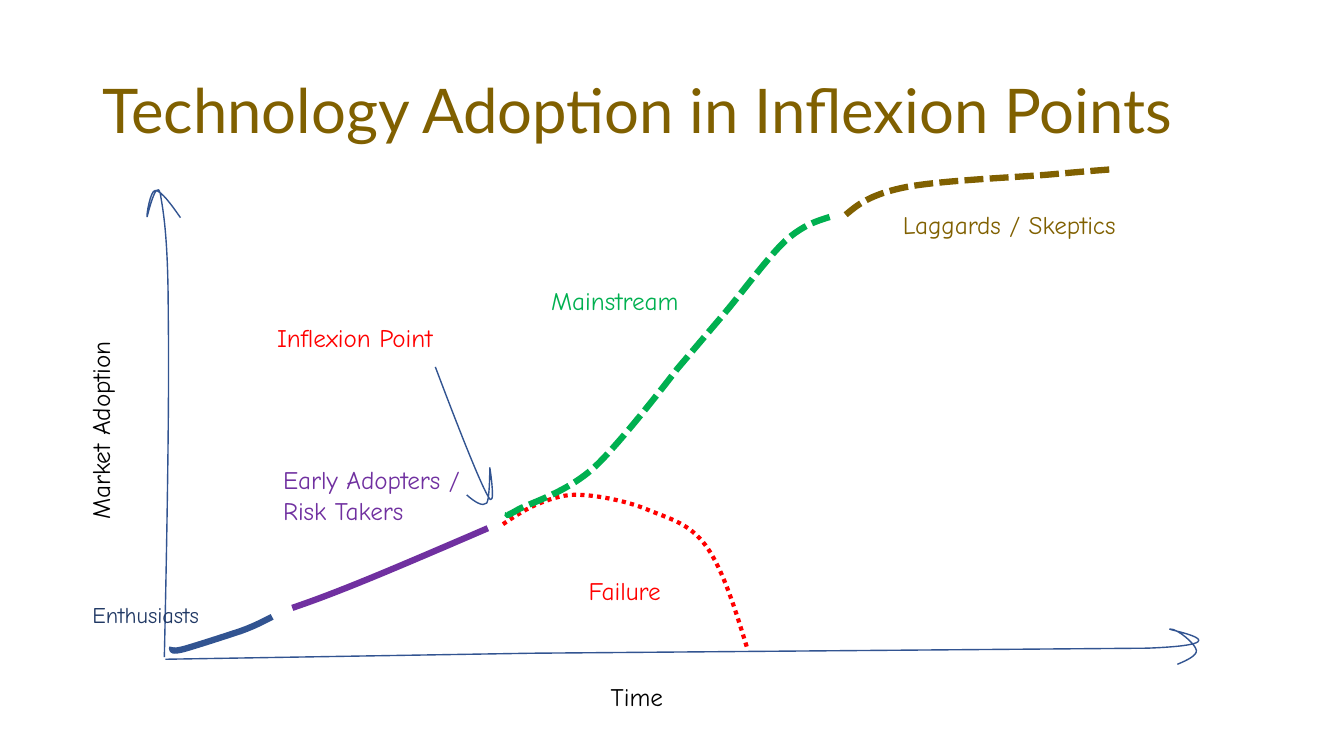
from lxml import etree
from pptx import Presentation
from pptx import util as u
from pptx.dml.color import RGBColor
from pptx.enum import dml, text
from pptx.oxml import ns

NAVY, PURPLE, RED = "325491", "7030A0", "FF0000"
GREEN, GOLD, BLACK = "00B050", "806000", "000000"
DOTS, DASHES = dml.MSO_LINE.ROUND_DOT, dml.MSO_LINE.SQUARE_DOT


def rgb(color):
    return RGBColor.from_string(color)


def add_run(p, words, font, size, color):
    r = p.add_run()
    r.text = words
    r.font.name = font
    r.font.size = u.Pt(size)
    r.font.color.rgb = rgb(color)


def add_title(s, words):
    sp = s.shapes.title
    sp.left, sp.top, sp.width, sp.height = map(u.Pt, (66, 28.8, 828, 104.4))
    tf = sp.text_frame
    tf.vertical_anchor = text.MSO_ANCHOR.MIDDLE
    tf.auto_size = text.MSO_AUTO_SIZE.NONE
    p = tf.paragraphs[0]
    p.alignment = text.PP_ALIGN.LEFT
    p.line_spacing = 0.9
    add_run(p, words, "Lato", 44, GOLD)


def add_label(s, lines, box, color, size=18, rotation=0, wrap=False):
    sp = s.shapes.add_textbox(*map(u.Pt, box))
    sp.rotation = rotation
    tf = sp.text_frame
    tf.word_wrap = wrap
    tf.auto_size = text.MSO_AUTO_SIZE.SHAPE_TO_FIT_TEXT
    for i, words in enumerate(lines):
        p = tf.add_paragraph() if i else tf.paragraphs[0]
        add_run(p, words, "Comic Neue", size, color)


def bend(sp, segments):
    lines = list(sp._element.iter(ns.qn("a:lnTo")))
    for line, (*controls, end) in zip(lines, segments):
        if controls:
            line.tag = ns.qn("a:cubicBezTo")
        for i, (x, y) in enumerate(controls):
            pt = etree.Element(ns.qn("a:pt"))
            pt.set("x", str(u.Pt(x) - sp.left))
            pt.set("y", str(u.Pt(y) - sp.top))
            line.insert(i, pt)


def add_curve(s, color, width, start, segments, dash=None):
    fb = s.shapes.build_freeform(*map(u.Pt, start))
    ends = [tuple(map(u.Pt, segment[-1])) for segment in segments]
    fb.add_line_segments(ends, close=False)
    sp = fb.convert_to_shape()
    bend(sp, segments)
    sp.shadow.inherit = False
    sp.fill.background()
    sp.line.color.rgb = rgb(color)
    sp.line.width = u.Pt(width)
    if dash:
        sp.line.dash_style = dash


def add_axes(s):
    add_curve(s, NAVY, 1, (117.4, 469.4), [
        [(119.5, 374.4), (121, 280), (120.2, 224.6)],
        [(120.2, 169.2), (116.6, 150.5), (114.5, 138.2)],
        [(111.6, 126.7), (105.1, 155.5), (105.1, 154.8)],
        [(104.4, 154.8), (107.3, 136.1), (110.9, 136.1)],
        [(115.2, 136.1), (122.4, 146.2), (128.9, 155.5)]])
    add_label(s, ["Market Adoption"], (-10.1, 282.2, 163.4, 29), BLACK, rotation=270)
    add_curve(s, NAVY, 1, (118.1, 470.9), [
        [(380.2, 466.6)],
        [(819.4, 463)],
        [(895, 460.1), (830.2, 449.3), (835.9, 449.3)],
        [(841.7, 449.3), (853.9, 460.1), (854.6, 464.4)],
        [(855.4, 468), (848.2, 471.6), (841, 474.5)]])
    add_label(s, ["Time"], (429.1, 483.1, 63.4, 29), BLACK)


def add_early_stages(s):
    add_curve(s, NAVY, 4.5, (123.1, 462.2), [
        [(122.4, 464.4), (122.4, 465.8), (131, 463.7)],
        [(139, 461.5), (161.3, 454.3), (172.1, 450.7)],
        [(182.2, 447.1), (188.6, 443.5), (194.4, 440.6)]])
    add_label(s, ["Early Adopters /", "Risk Takers"], (195.1, 328.3, 182.9, 51), PURPLE)
    add_label(s, ["Enthusiasts"], (59, 425.5, 110.9, 26.6), "203864", size=16)
    add_curve(s, PURPLE, 4.5, (208.8, 434.2), [
        [(223.9, 429.1), (239, 423.4), (262.1, 414)],
        [(285.1, 404.6), (316.8, 391), (348.5, 377.3)]])


def add_outcomes(s):
    add_curve(s, RED, 3, (359.3, 374.4), [
        [(367.9, 368.6), (376.6, 362.9), (385.9, 359.3)],
        [(395.3, 355.7), (403.2, 352.8), (415.4, 353.5)],
        [(428.4, 354.2), (447.1, 357.8), (461.5, 363.6)],
        [(476.6, 370.1), (491.8, 373), (504, 389.5)],
        [(516.2, 406.1), (524.9, 434.2), (533.5, 462.2)]], DOTS)
    add_label(s, ["Failure"], (413.3, 407.5, 118.8, 29), RED, wrap=True)
    add_curve(s, GREEN, 4.5, (362.9, 367.2), [
        [(362.2, 367.9), (360.7, 369.4), (370.8, 363.6)],
        [(380.9, 358.6), (404.6, 351.4), (423.4, 334.8)],
        [(442.1, 318.2), (483.8, 263.5), (483.8, 263.5)],
        [(516.2, 225.4)],
        [(529.2, 210.2), (548.6, 183.6), (560.9, 172.1)],
        [(573.8, 160.6), (583.9, 157.7), (593.3, 154.8)]], DASHES)
    add_label(s, ["Mainstream"], (386.6, 200.2, 119.5, 29), GREEN)
    add_curve(s, GOLD, 4.5, (604.1, 153.4), [
        [(612.7, 146.2), (621.4, 139), (645.8, 133.9)],
        [(670.3, 128.9), (725.8, 126.7), (750.2, 124.6)],
        [(775.4, 122.4), (784.1, 121.7), (793.4, 121)]], DASHES)
    add_label(s, ["Laggards / Skeptics"], (637.9, 146.2, 205.2, 29), GOLD)


def add_inflexion_point(s):
    add_label(s, ["Inflexion Point"], (190.8, 226.8, 157.7, 29), RED)
    add_curve(s, NAVY, 1, (311, 262.1), [
        [(326.2, 302.4), (342, 342.7), (348.5, 354.2)],
        [(355, 366.5), (349.9, 333.4), (349.9, 334.1)],
        [(349.9, 334.8), (349.9, 355.7), (347.8, 359.3)],
        [(344.9, 362.2), (339.1, 358.6), (333.4, 353.5)]])


def main():
    prs = Presentation()
    prs.slide_width, prs.slide_height = u.Pt(960), u.Pt(540)
    s = prs.slides.add_slide(prs.slide_layouts[5])
    add_title(s, "Technology Adoption in Inflexion Points")
    add_axes(s)
    add_early_stages(s)
    add_outcomes(s)
    add_inflexion_point(s)
    prs.save("out.pptx")


if __name__ == "__main__":
    main()
